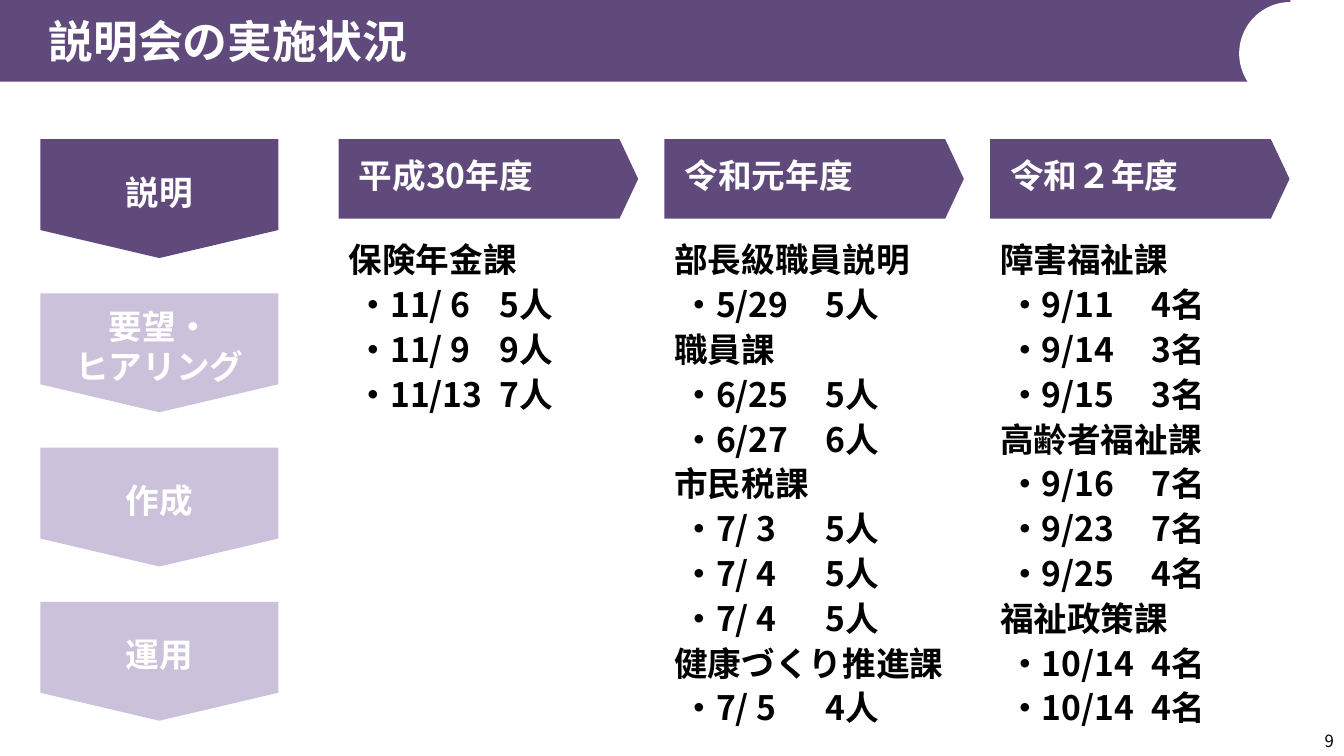
from dataclasses import dataclass

from lxml import etree
from pptx import Presentation
from pptx.dml.color import RGBColor
from pptx.enum.shapes import MSO_SHAPE
from pptx.enum.text import MSO_ANCHOR, MSO_AUTO_SIZE, PP_ALIGN
from pptx.oxml.ns import qn
from pptx.util import Emu, Inches, Pt

RECT, OVAL, PLATE = MSO_SHAPE.RECTANGLE, MSO_SHAPE.OVAL, MSO_SHAPE.PENTAGON
TOP, MIDDLE = MSO_ANCHOR.TOP, MSO_ANCHOR.MIDDLE
LEFT, CENTER, RIGHT = PP_ALIGN.LEFT, PP_ALIGN.CENTER, PP_ALIGN.RIGHT
FIXED = MSO_AUTO_SIZE.NONE


@dataclass(frozen=True)
class Theme:
    font: str = "Noto Sans CJK JP"
    dark: str = "604A7B"
    pale: str = "CCC1DA"
    white: str = "FFFFFF"
    black: str = "000000"
    title: int = 32
    body: int = 24
    small: int = 12
    line: int = 32


THEME = Theme()
WIDTH, HEIGHT = 13.33, 7.5
BAR = (0, 0, 12.8, 0.81)
STAGES = (0.4, 1.38, 2.36, 1.18)
STAGE_STEP = 1.53
YEARS = (3.36, 1.38, 2.97, 5.87)
YEAR_STEP = 3.23
HEAD, GAP = 0.79, 0.11
POINT = 0.235
INDENT = 0.08

STEPS = ["説明", "要望・\nヒアリング", "作成", "運用"]
# A row is a heading, or a date, a head count and the tab stop between them.
TERMS = [
    ("平成30年度", [
        "保険年金課",
        ("11/ 6", "5人", 1.75), ("11/ 9", "9人", 1.75), ("11/13", "7人", 1.88),
    ]),
    ("令和元年度", [
        "部長級職員説明", ("5/29", "5人", 1.67),
        "職員課", ("6/25", "5人", 1.67), ("6/27", "6人", 1.32),
        "市民税課",
        ("7/ 3", "5人", 1.55), ("7/ 4", "5人", 1.21), ("7/ 4", "5人", 1.21),
        "健康づくり推進課", ("7/ 5", "4人", 1.21),
    ]),
    ("令和２年度", [
        "障害福祉課",
        ("9/11", "4名", 1.76), ("9/14", "3名", 1.76), ("9/15", "3名", 1.76),
        "高齢者福祉課",
        ("9/16", "7名", 1.41), ("9/23", "7名", 1.41), ("9/25", "4名", 1.76),
        "福祉政策課", ("10/14", "4名", 1.87), ("10/14", "4名", 1.87),
    ]),
]


def place(box):
    return [Inches(v) for v in box]


def add_tab(para, stop):
    """Indent the first line and set one left tab stop."""
    props = para._p.get_or_add_pPr()
    props.set("marL", "0")
    props.set("indent", str(Inches(INDENT)))
    tabs = etree.SubElement(props, qn("a:tabLst"))
    etree.SubElement(tabs, qn("a:tab"), pos=str(Inches(stop)), algn="l")


def write(shape, rows, color=THEME.white, size=THEME.body, bold=True,
          align=LEFT, anchor=MIDDLE, inset=(0.08,) * 4, wrap=False, line=None):
    """Fill a shape with rows of text; a tuple row becomes a tabbed entry."""
    frame = shape.text_frame
    frame.auto_size, frame.word_wrap = FIXED, wrap
    frame.vertical_anchor = anchor
    (frame.margin_left, frame.margin_top,
     frame.margin_right, frame.margin_bottom) = place(inset)
    for i, row in enumerate(rows):
        para = frame.paragraphs[0] if i == 0 else frame.add_paragraph()
        para.alignment = align
        if line:
            para.line_spacing = Pt(line)
        if isinstance(row, tuple):
            date, count, stop = row
            add_tab(para, stop)
            row = f"・{date}\t{count}"
        run = para.add_run()
        run.text = row
        font = run.font
        font.name, font.size, font.bold = THEME.font, Pt(size), bold
        font.color.rgb = RGBColor.from_string(color)
        latin = run.font._element.find(qn("a:latin"))
        latin.addnext(etree.Element(qn("a:ea"), typeface=THEME.font))


def add_block(slide, kind, box, fill):
    shape = slide.shapes.add_shape(kind, *place(box))
    shape.shadow.inherit = False
    shape.fill.solid()
    shape.fill.fore_color.rgb = RGBColor.from_string(fill)
    shape.line.fill.background()
    if kind == PLATE:
        shape.adjustments[0] = POINT
    return shape


def add_title(slide, box, text):
    x, y, w, h = box
    add_block(slide, RECT, box, THEME.dark)
    add_block(slide, OVAL, (x + w - 0.51, y + 0.02, 1.02, 1.02), THEME.white)
    title = slide.shapes.title
    title.left, title.top, title.width, title.height = place(box)
    title.element.getparent().append(title.element)
    write(title, [text], size=THEME.title, inset=(0.48, 0.04, 0.04, 0.04))


def add_stage(slide, box, text, fill):
    """Draw a plate that points down, with upright text."""
    x, y, w, h = box
    turn = (w - h) / 2
    plate = add_block(slide, PLATE, (x + turn, y - turn, h, w), fill)
    plate.rotation = 90
    write(plate, text.split("\n"), align=CENTER)
    plate.element.find(".//" + qn("a:bodyPr")).set("vert", "vert270")


def add_year(slide, box, name, rows):
    x, y, w, h = box
    head = add_block(slide, PLATE, (x, y, w, HEAD), THEME.dark)
    write(head, [name], inset=(0.2, 0, 0.08, 0.08))
    top = HEAD + GAP
    body = slide.shapes.add_textbox(*place((x, y + top, w, h - top)))
    write(body, rows, color=THEME.black, anchor=TOP, wrap=True,
          inset=(0.1, 0.05, 0.1, 0.05), line=THEME.line)


def add_number(slide, box, text):
    note = slide.shapes.add_textbox(*place(box))
    write(note, [text], color=THEME.black, size=THEME.small, bold=False,
          align=RIGHT, anchor=TOP, inset=(0.1, 0.05, 0.1, 0.05), wrap=True)


def main():
    deck = Presentation()
    deck.slide_width, deck.slide_height = Emu(Inches(WIDTH)), Emu(Inches(HEIGHT))
    slide = deck.slides.add_slide(deck.slide_layouts[5])
    add_number(slide, (WIDTH - 0.86, HEIGHT - 0.3, 0.86, 0.3), "9")
    add_title(slide, BAR, "説明会の実施状況")
    x, y, w, h = STAGES
    for i, step in enumerate(STEPS):
        fill = THEME.pale if i else THEME.dark
        add_stage(slide, (x, y + i * STAGE_STEP, w, h), step, fill)
    x, y, w, h = YEARS
    for i, (name, rows) in enumerate(TERMS):
        add_year(slide, (x + i * YEAR_STEP, y, w, h), name, rows)
    deck.save("out.pptx")


if __name__ == "__main__":
    main()
